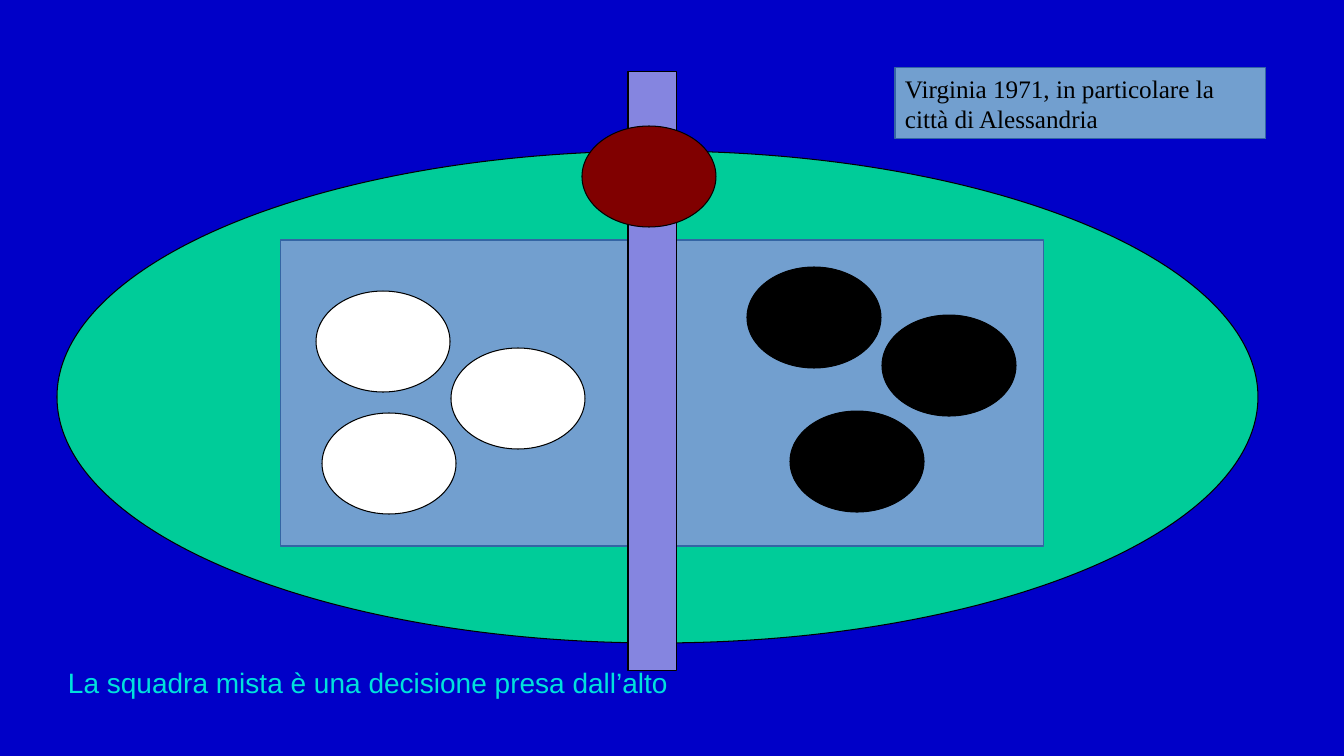
from pptx import Presentation
from pptx import util as u
from pptx.dml.color import RGBColor
from pptx.enum import shapes, text

PX = 12192000 / 1344
OVAL = shapes.MSO_SHAPE.OVAL
RECT = shapes.MSO_SHAPE.RECTANGLE
PLAYER_W, PLAYER_H = 134, 101


def emu(*lengths):
    return [u.Emu(round(n * PX)) for n in lengths]


def color(value):
    return RGBColor.from_string(value)


def add_figure(s, kind, box, fill, line="000000"):
    sp = s.shapes.add_shape(kind, *emu(*box))
    sp.shadow.inherit = False
    sp.fill.solid()
    sp.fill.fore_color.rgb = color(fill)
    sp.line.color.rgb = color(line)
    sp.line.width = u.Pt(0.75)
    return sp


def write(sp, words, font, size, ink, anchor):
    tf = sp.text_frame
    tf.word_wrap = True
    tf.vertical_anchor = anchor
    tf.margin_left = tf.margin_right = u.Inches(0.1)
    tf.margin_top = tf.margin_bottom = u.Inches(0.05)
    p = tf.paragraphs[0]
    p.text = words
    p.alignment = text.PP_ALIGN.LEFT
    p.font.name = font
    p.font.size = u.Pt(size)
    p.font.color.rgb = color(ink)


def add_team(s, left, top, offsets, fill):
    for dx, dy in offsets:
        add_figure(s, OVAL, (left + dx, top + dy, PLAYER_W, PLAYER_H), fill)


def add_field(s, left, top, width, height):
    """Draw the oval field, its inner court and the two teams."""
    add_figure(s, OVAL, (left, top, width, height), "00CC99")
    court_left, court_top = left + 224, top + 89
    add_figure(s, RECT, (court_left, court_top, 763, 306), "729FCF", "3465A4")
    add_team(s, court_left, court_top, [(170, 108), (41, 173), (35, 51)], "FFFFFF")
    add_team(s, court_left, court_top, [(601, 75), (509, 171), (466, 27)], "000000")


def add_divider(s, left, top, width, height):
    add_figure(s, RECT, (left, top, width, height), "8585E0")
    add_figure(s, OVAL, (left - 46, top + 54, PLAYER_W, PLAYER_H), "800000")


def add_note(s, *box):
    sp = add_figure(s, RECT, box, "729FCF", "3465A4")
    write(sp, "Virginia 1971, in particolare la città di Alessandria",
          "Times New Roman", 18, "000000", text.MSO_ANCHOR.TOP)


def add_caption(s, *box):
    sp = s.shapes.add_textbox(*emu(*box))
    write(sp, "La squadra mista è una decisione presa dall’alto",
          "Arial", 20, "00E1DC", text.MSO_ANCHOR.MIDDLE)


def main():
    prs = Presentation()
    prs.slide_width, prs.slide_height = emu(1344, 756)
    s = prs.slides.add_slide(prs.slide_layouts[6])
    s.background.fill.solid()
    s.background.fill.fore_color.rgb = color("0000C8")
    add_field(s, 57, 151, 1201, 492)
    add_divider(s, 628, 72, 49, 599)
    add_note(s, 895, 68, 371, 71)
    add_caption(s, 58, 659, 1236, 47)
    prs.save("out.pptx")


if __name__ == "__main__":
    main()
